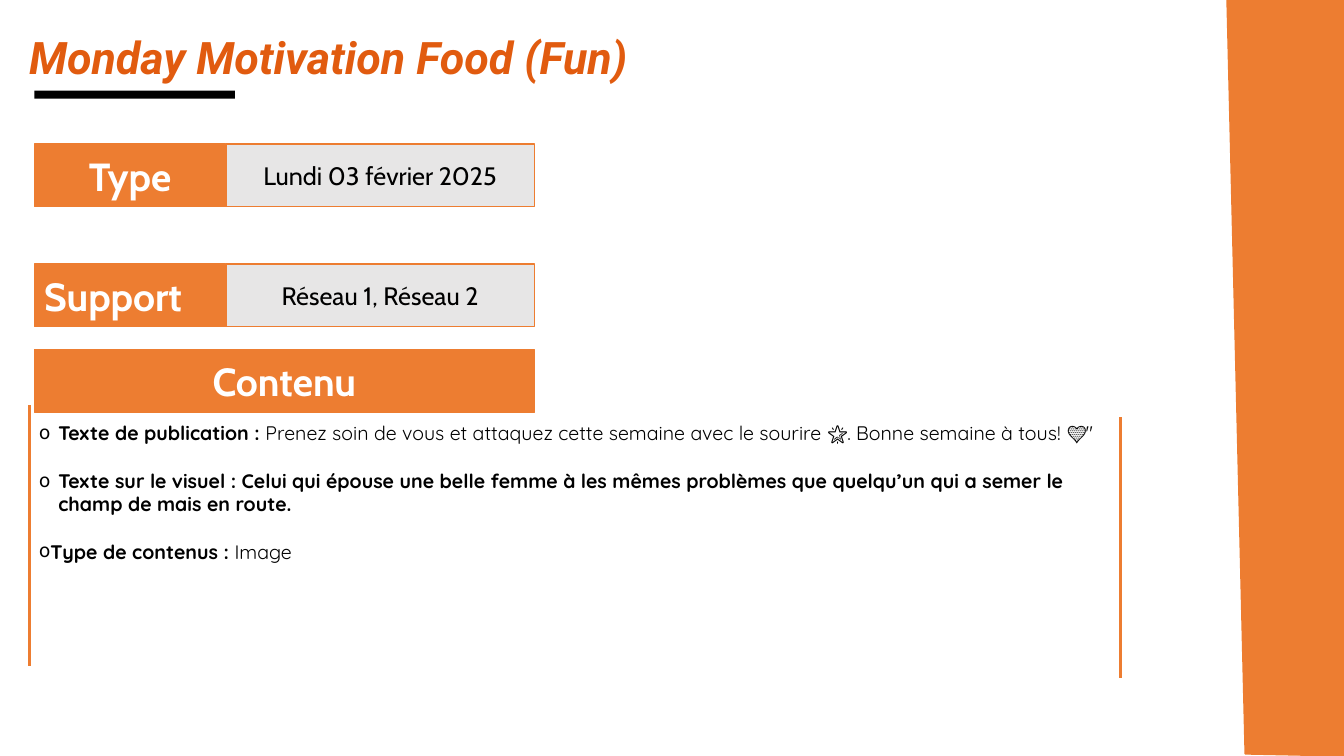
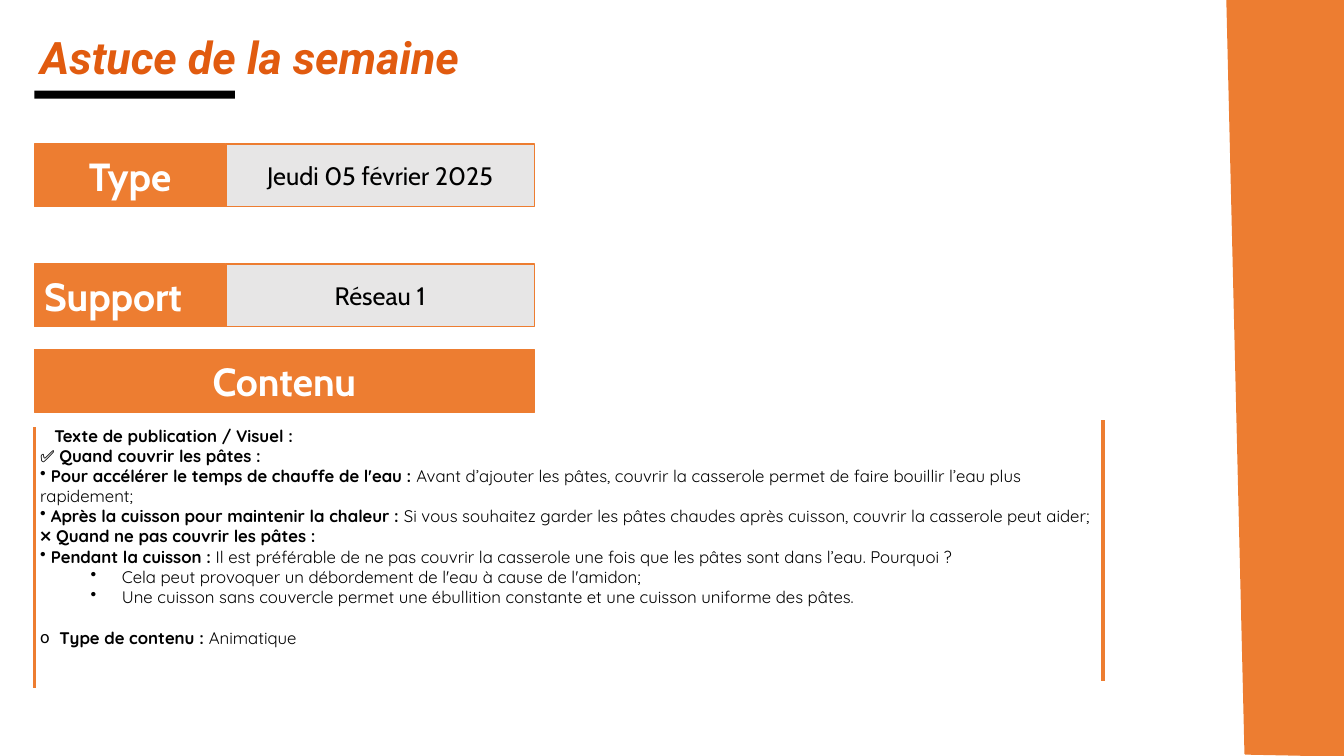
from dataclasses import dataclass

from lxml import etree
from pptx import Presentation
from pptx import util as u
from pptx.dml.color import RGBColor
from pptx.enum import shapes, text
from pptx.oxml import ns


@dataclass(frozen=True)
class Theme:
    orange: str = "ED7D31"
    title_orange: str = "E15B0F"
    grey: str = "E7E6E6"
    black: str = "000000"
    white: str = "FFFFFF"
    label_font: str = "Cabin"
    body_font: str = "Quicksand"
    title_font: str = "Roboto"
    title_size: int = 32
    label_size: int = 28
    value_size: int = 18
    border: float = 1
    rule: float = 2.25


THEME = Theme()
TITLE = dict(name=THEME.title_font, size=THEME.title_size, bold=True, italic=True,
             color=THEME.title_orange)
LABEL = dict(name=THEME.label_font, size=THEME.label_size, bold=True, color=THEME.white)
VALUE = dict(name=THEME.label_font, size=THEME.value_size, color=THEME.black)
BODY = dict(name=THEME.body_font, color=THEME.black)

LEFT, LABEL_WIDTH, VALUE_WIDTH, ROW_HEIGHT = 0.34, 1.9, 3.06, 0.62
RULE_LENGTH = 2.59
CENTER = text.PP_ALIGN.CENTER

# Paragraph formats: bullet, left margin and hanging indent in inches
CIRCLE = dict(bullet="o", margin=0.19, hanging=0.19)
CIRCLE_FLUSH = dict(bullet="o")
DOT = dict(bullet="•")
SUB_DOT = dict(bullet="•", margin=0.81, hanging=0.31)

POSTS = [
    dict(
        title="Monday Motivation Food (Fun)", title_indent=0,
        date="Lundi 03 février 2025", support="Réseau 1, Réseau 2",
        rules=[(0.29, 4.02), (11.11, 4.14)],
        body_at=(0.29, 4.13, 10.82, 1.95), size=14, gap=17,
        # bold text, regular text, paragraph format
        body=[
            ("Texte de publication : ",
             "Prenez soin de vous et attaquez cette semaine avec le sourire 🌟. "
             "Bonne semaine à tous! 💛\"", CIRCLE),
            ("Texte sur le visuel : Celui qui épouse une belle femme à les mêmes problèmes "
             "que quelqu’un qui a semer le champ de mais en route.", "",
             dict(CIRCLE, gap_before=True)),
            ("Type de contenus :", " Image", dict(CIRCLE_FLUSH, gap_before=True)),
        ],
    ),
    dict(
        title="Astuce de la semaine", title_indent=0.11,
        date="Jeudi 05 février 2025", support="Réseau 1",
        rules=[(0.34, 4.24), (10.94, 4.17)],
        body_at=(0.3, 4.17, 10.82, 2.93), size=12, gap=15,
        body=[
            ("Texte de publication / Visuel :", "", dict(margin=0.14)),
            ("✅ Quand couvrir les pâtes :", "", {}),
            (" Pour accélérer le temps de chauffe de l'eau :",
             " Avant d’ajouter les pâtes, couvrir la casserole permet de faire bouillir "
             "l’eau plus rapidement;", DOT),
            (" Après la cuisson pour maintenir la chaleur :",
             " Si vous souhaitez garder les pâtes chaudes après cuisson, couvrir la "
             "casserole peut aider;", DOT),
            ("❌ Quand ne pas couvrir les pâtes :", "", {}),
            (" Pendant la cuisson :",
             " Il est préférable de ne pas couvrir la casserole une fois que les pâtes "
             "sont dans l’eau. Pourquoi ?", DOT),
            ("", "Cela peut provoquer un débordement de l'eau à cause de l'amidon;", SUB_DOT),
            ("", "Une cuisson sans couvercle permet une ébullition constante et une "
             "cuisson uniforme des pâtes.", SUB_DOT),
            ("Type de contenu : ", "Animatique", dict(CIRCLE, gap_before=True)),
        ],
    ),
]


def inches(*lengths):
    return [u.Inches(length) for length in lengths]


def rgb(value):
    return RGBColor.from_string(value)


def add_run(paragraph, wording, **font_format):
    run = paragraph.add_run()
    run.text = wording
    for attribute, value in font_format.items():
        if attribute == "color":
            run.font.color.rgb = rgb(value)
        else:
            setattr(run.font, attribute, u.Pt(value) if attribute == "size" else value)


def paint(shape, fill, border=None):
    shape.shadow.inherit = False
    shape.fill.solid()
    shape.fill.fore_color.rgb = rgb(fill)
    if border:
        shape.line.color.rgb = rgb(border)
        shape.line.width = u.Pt(THEME.border)
    else:
        shape.line.fill.background()


def add_box(slide, at, fill, border=None):
    box = slide.shapes.add_shape(shapes.MSO_SHAPE.RECTANGLE, *inches(*at))
    paint(box, fill, border)
    return box


def add_cell(slide, at, fill, wording, font_format, align=CENTER):
    cell = add_box(slide, at, fill, THEME.orange)
    cell.text_frame.vertical_anchor = text.MSO_ANCHOR.MIDDLE
    paragraph = cell.text_frame.paragraphs[0]
    paragraph.alignment = align
    add_run(paragraph, wording, **font_format)


def add_row(slide, top, label, value, label_align=CENTER):
    add_cell(slide, (LEFT, top, LABEL_WIDTH, ROW_HEIGHT), THEME.orange, label, LABEL,
             label_align)
    add_cell(slide, (LEFT + LABEL_WIDTH, top, VALUE_WIDTH, ROW_HEIGHT), THEME.grey, value,
             VALUE)


def add_rule(slide, left, top):
    rule = slide.shapes.add_connector(shapes.MSO_CONNECTOR.STRAIGHT,
                                      *inches(left, top, left, top + RULE_LENGTH))
    rule.line.color.rgb = rgb(THEME.orange)
    rule.line.width = u.Pt(THEME.rule)
    etree.SubElement(rule._element.spPr, ns.qn("a:effectLst"))


def add_side_band(slide):
    start, *corners = [inches(*point) for point in
                       [(12.17, 0), (13.33, 0), (13.34, 7.5), (12.35, 7.48)]]
    outline = slide.shapes.build_freeform(*start)
    outline.add_line_segments(corners, close=True)
    paint(outline.convert_to_shape(), THEME.orange, THEME.orange)


def add_text_frame(slide, at):
    frame = slide.shapes.add_textbox(*inches(*at)).text_frame
    frame.word_wrap = True
    return frame


def format_paragraph(paragraph, bullet=None, margin=0, hanging=0):
    properties = paragraph._p.get_or_add_pPr()
    for attribute, length in dict(marL=margin, indent=-hanging).items():
        properties.set(attribute, str(u.Inches(length)))
    if bullet:
        if bullet == "o":
            etree.SubElement(properties, ns.qn("a:buFont"), typeface=THEME.title_font)
        etree.SubElement(properties, ns.qn("a:buChar"), char=bullet)


def add_title(slide, wording, indent):
    paragraph = add_text_frame(slide, (0.19, 0.25, 11.03, 0.52)).paragraphs[0]
    format_paragraph(paragraph, margin=indent)
    add_run(paragraph, wording, **TITLE)


def add_body(slide, at, size, gap, body):
    frame = add_text_frame(slide, at)
    for index, (strong, regular, layout) in enumerate(body):
        paragraph = frame.add_paragraph() if index else frame.paragraphs[0]
        layout = dict(layout)
        if layout.pop("gap_before", False):
            paragraph.space_before = u.Pt(gap)
        format_paragraph(paragraph, **layout)
        for wording, bold in ((strong, True), (regular, False)):
            if wording:
                add_run(paragraph, wording, size=size, bold=bold, **BODY)


def add_post(slide, post):
    add_side_band(slide)
    add_box(slide, (LEFT, 0.9, 1.99, 0.08), THEME.black)
    add_row(slide, 1.43, "Type", post["date"])
    add_row(slide, 2.62, "Support", post["support"], text.PP_ALIGN.LEFT)
    for left, top in post["rules"]:
        add_rule(slide, left, top)
    add_cell(slide, (LEFT, 3.47, LABEL_WIDTH + VALUE_WIDTH, ROW_HEIGHT), THEME.orange,
             "Contenu", LABEL)
    add_body(slide, post["body_at"], post["size"], post["gap"], post["body"])
    add_title(slide, post["title"], post["title_indent"])


def main():
    deck = Presentation()
    deck.slide_width, deck.slide_height = inches(13.33, 7.5)
    for post in POSTS:
        add_post(deck.slides.add_slide(deck.slide_layouts[6]), post)
    deck.save("out.pptx")


if __name__ == "__main__":
    main()
